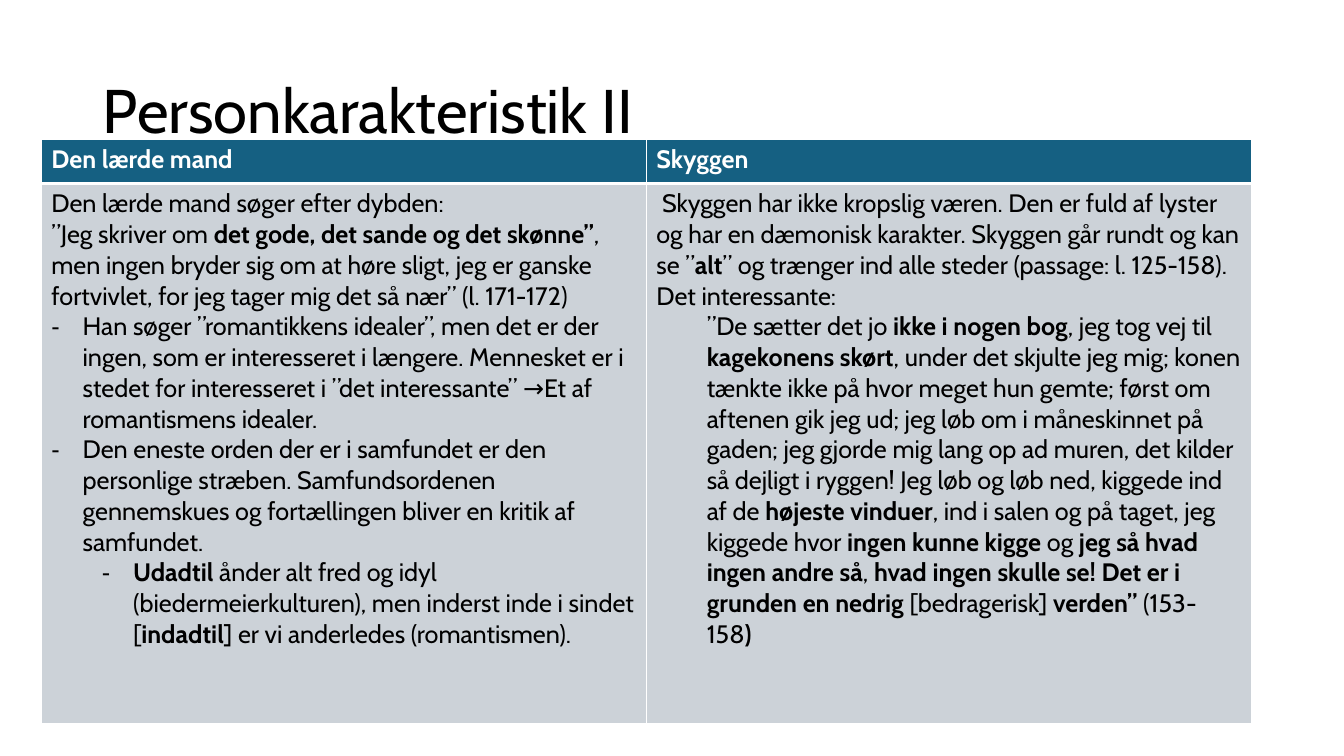
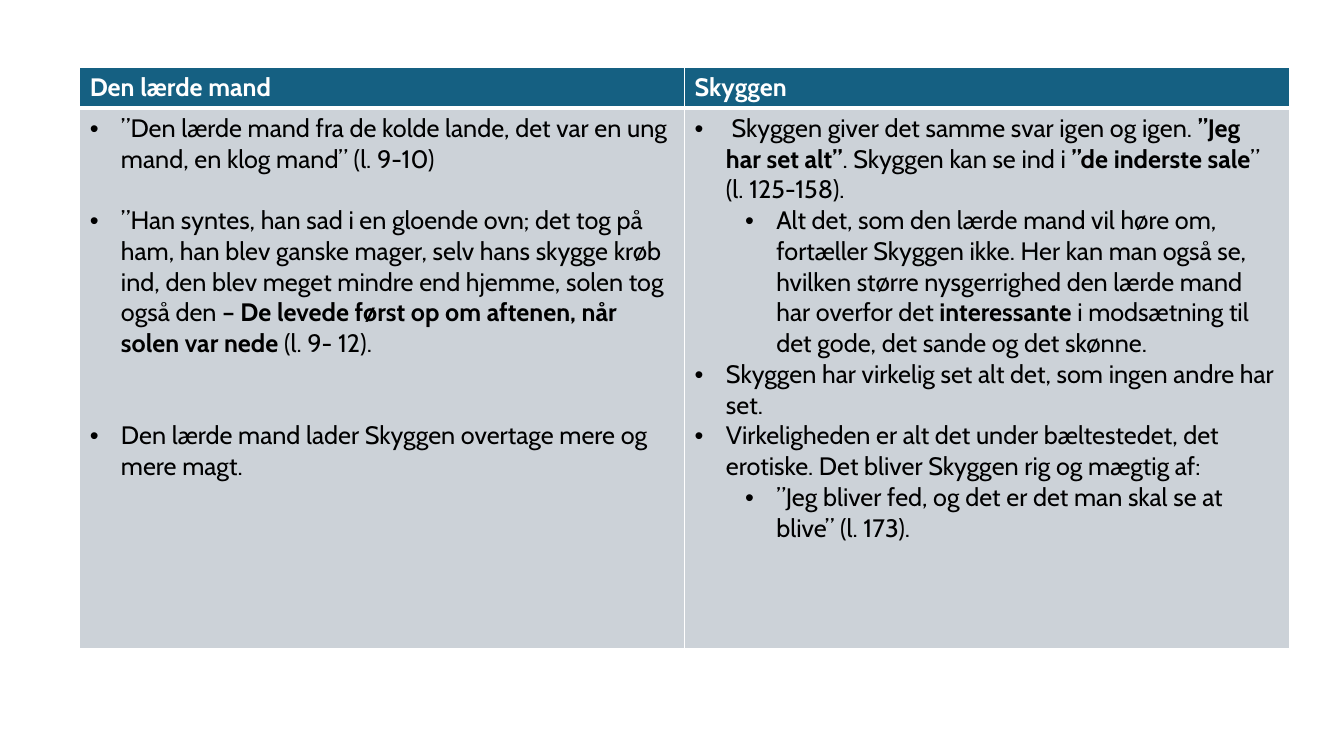
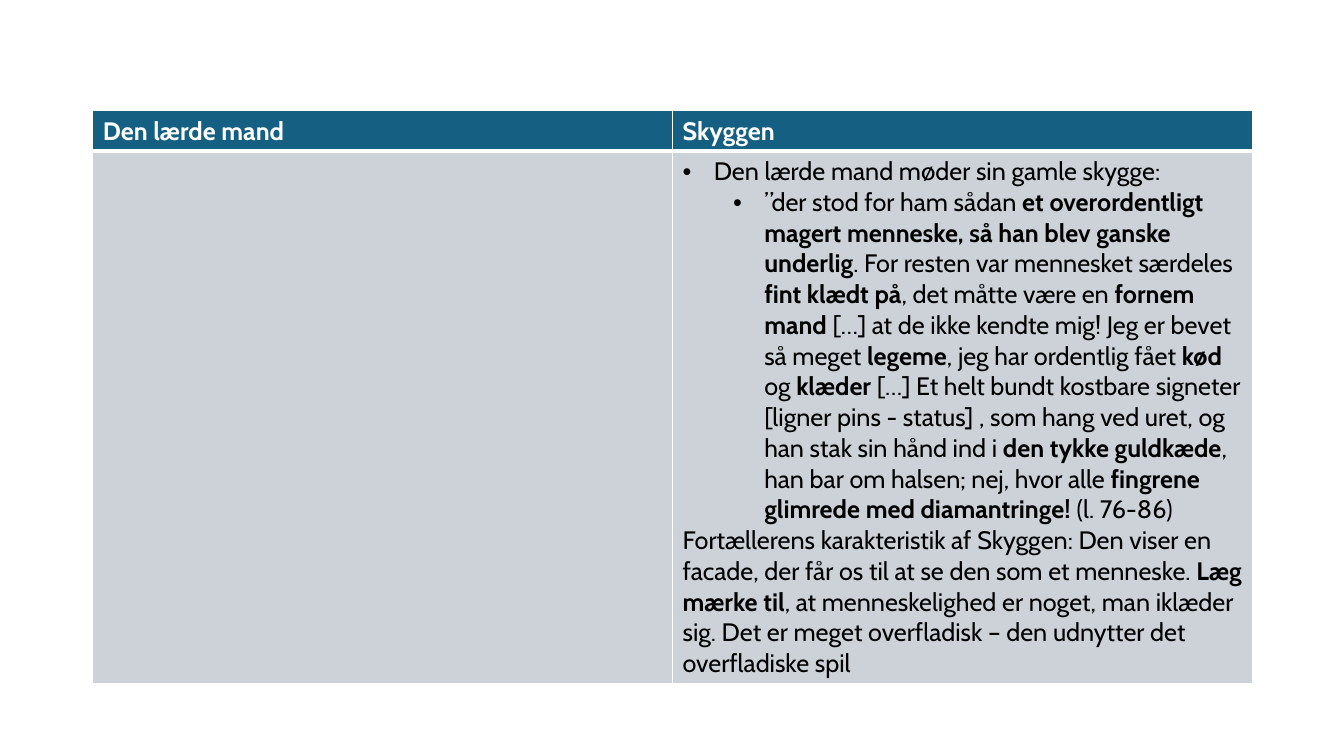
from lxml import etree
from pptx import Presentation
from pptx import util as u
from pptx.dml.color import RGBColor
from pptx.enum import text
from pptx.oxml.ns import qn

FONT = "Cabin"
COLORS = {"header": "156082", "body": "CCD2D8", "grid": "FFFFFF",
          "light": "FFFFFF", "dark": "000000"}
TEXT_SIZE, LINE_PITCH = 18, 22
HEADINGS = ["Den lærde mand", "Skyggen"]

# level, left margin, first-line indent, bullet
STYLES = {
    "plain": (0, 0, 0, None),
    "quote": (1, 0.5, 0, None),
    "dash": (0, 0.31, -0.31, "-"),
    "subdash": (1, 0.81, -0.31, "-"),
    "dot": (0, 0.31, -0.31, "•"),
    "subdot": (1, 0.81, -0.31, "•"),
}

# Paragraphs are (style, text, lines of space before); ** switches bold on and off.
SLIDES = [
    {
        "title": "Personkarakteristik II",
        "at": (0.41, 1.38), "column": 6, "rows": (0.44, 5.36),
        "cells": [
            [
                ("plain", "Den lærde mand søger efter dybden:", 0),
                ("plain", "”Jeg skriver om **det gode, det sande og det skønne”**, men ingen "
                 "bryder sig om at høre sligt, jeg er ganske fortvivlet, for jeg tager mig "
                 "det så nær” (l. 171-172)", 0),
                ("dash", "Han søger ”romantikkens idealer”, men det er der ingen, som er "
                 "interesseret i længere. Mennesket er i stedet for interesseret i "
                 "”det interessante” →Et af romantismens idealer.", 0),
                ("dash", "Den eneste orden der er i samfundet er den personlige stræben. "
                 "Samfundsordenen gennemskues og fortællingen bliver en kritik af "
                 "samfundet.", 0),
                ("subdash", "**Udadtil** ånder alt fred og idyl (biedermeierkulturen), men "
                 "inderst inde i sindet [**indadtil**] er vi anderledes (romantismen).", 0),
            ],
            [
                ("plain", " Skyggen har ikke kropslig væren. Den er fuld af lyster og har en "
                 "dæmonisk karakter. Skyggen går rundt og kan se ”**alt**” og trænger ind "
                 "alle steder (passage: l. 125-158).", 0),
                ("plain", "Det interessante:", 0),
                ("quote", "”De sætter det jo **ikke i nogen bog**, jeg tog vej til "
                 "**kagekonens skørt**, under det skjulte jeg mig; konen tænkte ikke på hvor "
                 "meget hun gemte; først om aftenen gik jeg ud; jeg løb om i måneskinnet på "
                 "gaden; jeg gjorde mig lang op ad muren, det kilder så dejligt i ryggen! "
                 "Jeg løb og løb ned, kiggede ind af de **højeste vinduer**, ind i salen og "
                 "på taget, jeg kiggede hvor **ingen kunne kigge** og **jeg så hvad ingen "
                 "andre så**, **hvad ingen skulle se! Det er i grunden en nedrig "
                 "**[bedragerisk] **verden” **(153-158**)**", 0),
            ],
        ],
    },
    {
        "at": (0.79, 0.67), "column": 6, "rows": (0.4, 5.36),
        "cells": [
            [
                ("dot", "”Den lærde mand fra de kolde lande, det var en ung mand, en klog "
                 "mand” (l. 9-10)", 0),
                ("dot", "”Han syntes, han sad i en gloende ovn; det tog på ham, han blev "
                 "ganske mager, selv hans skygge krøb ind, den blev meget mindre end hjemme, "
                 "solen tog også den **– De levede først op om aftenen, når solen var "
                 "nede** (l. 9- 12).", 1),
                ("dot", "Den lærde mand lader Skyggen overtage mere og mere magt.", 2),
            ],
            [
                ("dot", " Skyggen giver det samme svar igen og igen. **”Jeg har set alt”**. "
                 "Skyggen kan se ind i **”de inderste sale**” (l. 125-158).", 0),
                ("subdot", "Alt det, som den lærde mand vil høre om, fortæller Skyggen ikke. "
                 "Her kan man også se, hvilken større nysgerrighed den lærde mand har overfor "
                 "det** interessante** i modsætning til det gode, det sande og det "
                 "skønne.", 0),
                ("dot", "Skyggen har virkelig set alt det, som ingen andre har set.", 0),
                ("dot", "Virkeligheden er alt det under bæltestedet, det erotiske. Det bliver "
                 "Skyggen rig og mægtig af:", 0),
                ("subdot", "”Jeg bliver fed, og det er det man skal se at blive” "
                 "(l. 173).", 0),
            ],
        ],
    },
    {
        "at": (0.92, 1.1), "column": 5.75, "rows": (0.4, 5.28),
        "cells": [
            [],
            [
                ("dot", "Den lærde mand møder sin gamle skygge:", 0),
                ("subdot", "”der stod for ham sådan **et overordentligt magert menneske, så "
                 "han blev ganske underlig**. For resten var mennesket særdeles **fint klædt "
                 "på**, det måtte være en **fornem mand** […] at de ikke kendte mig! Jeg er "
                 "bevet så meget **legeme**, jeg har ordentlig fået **kød** og **klæder** […] "
                 "Et helt bundt kostbare signeter [ligner pins - status] , som hang ved uret, "
                 "og han stak sin hånd ind i **den tykke guldkæde**, han bar om halsen; nej, "
                 "hvor alle **fingrene glimrede med diamantringe! **(l. 76-86)", 0),
                ("plain", "Fortællerens karakteristik af Skyggen: Den viser en facade, der "
                 "får os til at se den som et menneske. **Læg mærke til**, at menneskelighed "
                 "er noget, man iklæder sig. Det er meget overfladisk – den udnytter det "
                 "overfladiske spil", 0),
            ],
        ],
    },
]


def add_spans(para, marked, size, color):
    """Add the text as runs, bold between pairs of **."""
    for number, part in enumerate(marked.split("**")):
        if part:
            span = para.add_run()
            span.text = part
            span.font.name = FONT
            span.font.size = u.Pt(size)
            span.font.bold = number % 2 == 1
            span.font.color.rgb = RGBColor.from_string(COLORS[color])


def style_paragraph(para, style, gap):
    level, margin, indent, bullet = STYLES[style]
    para.level = level
    if gap:
        para.space_before = u.Pt(gap * LINE_PITCH)
    props = para._p.get_or_add_pPr()
    props.set("marL", str(u.Inches(margin)))
    props.set("indent", str(u.Inches(indent)))
    if bullet:
        etree.SubElement(props, qn("a:buFont"), typeface="Arial")
        etree.SubElement(props, qn("a:buChar"), char=bullet)
    else:
        etree.SubElement(props, qn("a:buNone"))


def paint_cell(cell, fill, top, bottom):
    """Fill the cell and draw its borders; top and bottom are widths in points."""
    props = cell._tc.get_or_add_tcPr()
    for side, width in (("L", 1), ("R", 1), ("T", top), ("B", bottom)):
        line = etree.SubElement(props, qn(f"a:ln{side}"), w=str(u.Pt(width)))
        solid = etree.SubElement(line, qn("a:solidFill"))
        etree.SubElement(solid, qn("a:srgbClr"), val=COLORS["grid"])
    cell.fill.solid()
    cell.fill.fore_color.rgb = RGBColor.from_string(COLORS[fill])


def add_title(slide, title):
    box = slide.shapes.add_textbox(u.Inches(0.92), u.Inches(0.4), u.Inches(11.5), u.Inches(1.45))
    frame = box.text_frame
    frame.word_wrap = True
    frame.vertical_anchor = text.MSO_ANCHOR.MIDDLE
    para = frame.paragraphs[0]
    para.line_spacing = 0.9
    add_spans(para, title, 44, "dark")


def add_comparison(slide, content):
    """Add the two-column table with a header row and one body row."""
    left, top = content["at"]
    width = content["column"] * len(HEADINGS)
    table = slide.shapes.add_table(
        2, len(HEADINGS), u.Inches(left), u.Inches(top),
        u.Inches(width), u.Inches(sum(content["rows"]))).table
    table.horz_banding = False
    for row, height in zip(table.rows, content["rows"]):
        row.height = u.Inches(height)
    for index, (heading, paragraphs) in enumerate(zip(HEADINGS, content["cells"])):
        table.columns[index].width = u.Inches(content["column"])
        header, body = table.cell(0, index), table.cell(1, index)
        paint_cell(header, "header", 1, 3)
        paint_cell(body, "body", 3, 1)
        add_spans(header.text_frame.paragraphs[0], f"**{heading}**", TEXT_SIZE, "light")
        frame = body.text_frame
        for number, (style, marked, gap) in enumerate(paragraphs):
            para = frame.add_paragraph() if number else frame.paragraphs[0]
            style_paragraph(para, style, gap)
            add_spans(para, marked, TEXT_SIZE, "dark")


def main():
    deck = Presentation()
    deck.slide_width, deck.slide_height = u.Inches(13.33), u.Inches(7.5)
    for content in SLIDES:
        slide = deck.slides.add_slide(deck.slide_layouts[6])
        if "title" in content:
            add_title(slide, content["title"])
        add_comparison(slide, content)
    deck.save("out.pptx")


if __name__ == "__main__":
    main()
